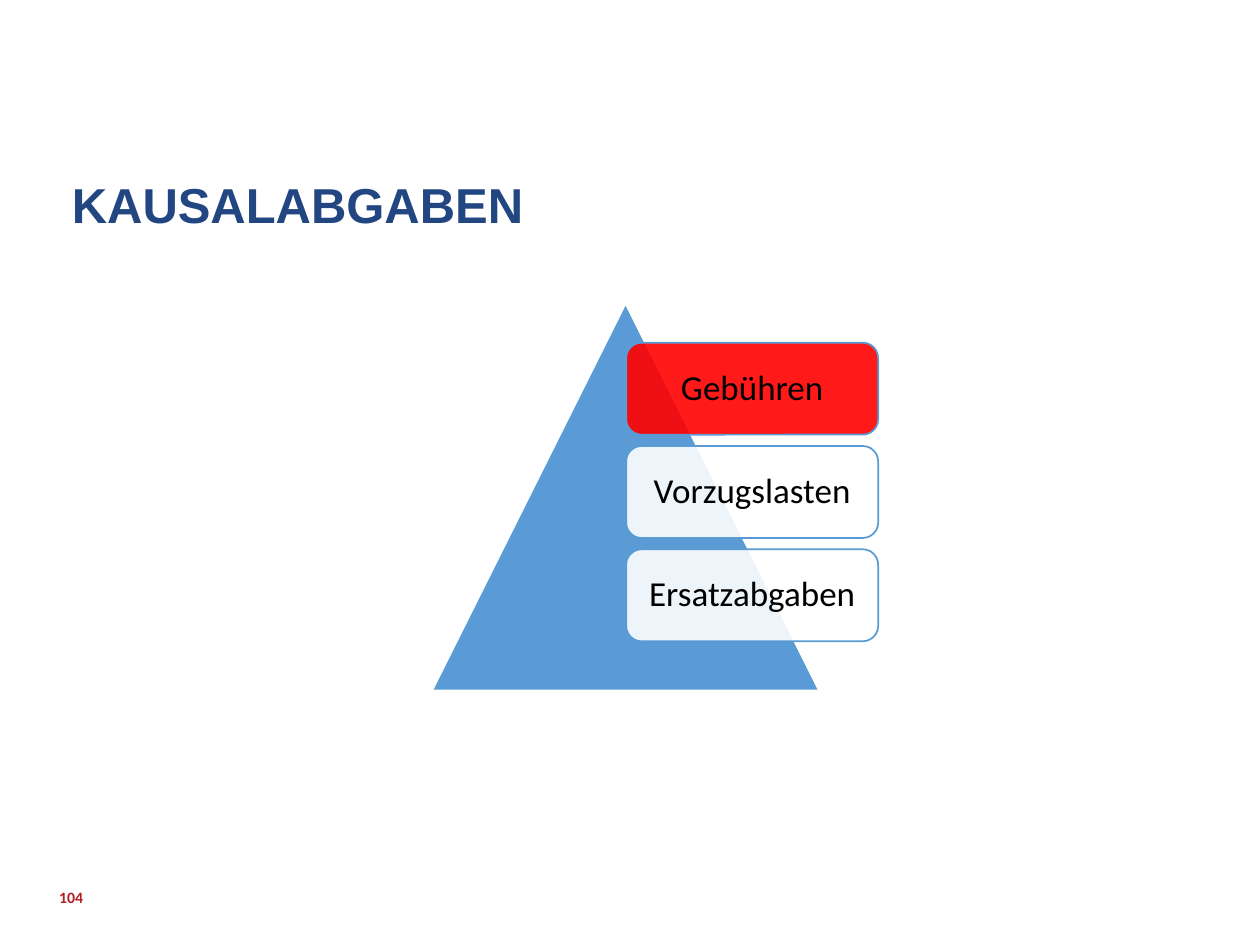
from dataclasses import dataclass

import pptx
import pptx.dml.color
import pptx.enum.shapes
import pptx.enum.text
import pptx.oxml
import pptx.oxml.ns
import pptx.util

Inches = pptx.util.Inches
Kind = pptx.enum.shapes.MSO_SHAPE
Align = pptx.enum.text.PP_ALIGN
Anchor = pptx.enum.text.MSO_ANCHOR


@dataclass(frozen=True)
class Theme:
    navy: str = "224681"
    blue: str = "5B9BD5"
    red: str = "FF0000"
    white: str = "FFFFFF"
    black: str = "000000"
    wine: str = "B21D24"
    head: int = 28
    body: int = 20
    foot: int = 9


@dataclass(frozen=True)
class Card:
    text: str
    fill: str


THEME = Theme()
CARDS = [
    Card("Gebühren", THEME.red),
    Card("Vorzugslasten", THEME.white),
    Card("Ersatzabgaben", THEME.white),
]


def rgb(code: str) -> pptx.dml.color.RGBColor:
    return pptx.dml.color.RGBColor.from_string(code)


def write(shape, text: str, *, size: int, color: str, font: str = "Calibri",
          bold: bool = False, align=Align.LEFT, anchor=Anchor.MIDDLE,
          inset: tuple = (0, 0), space: float = 1.0) -> None:
    frame = shape.text_frame
    frame.word_wrap = True
    frame.auto_size = pptx.enum.text.MSO_AUTO_SIZE.NONE
    frame.vertical_anchor = anchor
    frame.margin_left = frame.margin_right = Inches(inset[0])
    frame.margin_top = frame.margin_bottom = Inches(inset[1])
    para = frame.paragraphs[0]
    para.alignment = align
    para.line_spacing = space
    run = para.add_run()
    run.text = text
    run.font.name = font
    run.font.size = pptx.util.Pt(size)
    run.font.bold = bold
    run.font.color.rgb = rgb(color)


def draw(slide, kind, box: tuple, fill: str, line: str, alpha: int = 100):
    shape = slide.shapes.add_shape(kind, *map(Inches, box))
    shape.shadow.inherit = False
    shape.fill.solid()
    shape.fill.fore_color.rgb = rgb(fill)
    shape.line.color.rgb = rgb(line)
    shape.line.width = pptx.util.Pt(1)
    if alpha < 100:
        tint = shape.fill._xPr.find(".//" + pptx.oxml.ns.qn("a:srgbClr"))
        tint.append(pptx.oxml.parse_xml(
            f'<a:alpha {pptx.oxml.ns.nsdecls("a")} val="{alpha * 1000}"/>'))
    return shape


def stack(slide, cards: list[Card], left: float, top: float, step: float) -> None:
    for row, card in enumerate(cards):
        box = (left, top + row * step, 2, 0.73)
        shape = draw(slide, Kind.ROUNDED_RECTANGLE, box, card.fill, THEME.blue, 90)
        write(shape, card.text, size=THEME.body, color=THEME.black,
              align=Align.CENTER, inset=(0.11, 0.11), space=0.9)


def main() -> None:
    deck = pptx.Presentation()
    deck.slide_width, deck.slide_height = Inches(10), Inches(7.5)
    slide = deck.slides.add_slide(deck.slide_layouts[5])

    title = slide.shapes.title
    title.left, title.top = Inches(0.47), Inches(1.39)
    title.width, title.height = Inches(7.64), Inches(0.94)
    write(title, "KAUSALABGABEN", size=THEME.head, color=THEME.navy, font="Arial",
          bold=True, anchor=Anchor.TOP, inset=(0.1, 0.05), space=0.9)

    draw(slide, Kind.ISOSCELES_TRIANGLE, (3.43, 2.41, 3.07, 3.07),
         THEME.blue, THEME.white)
    stack(slide, CARDS, 4.97, 2.72, 0.82)

    page = slide.shapes.add_textbox(*map(Inches, (0.47, 6.92, 2.25, 0.4)))
    write(page, "104", size=THEME.foot, color=THEME.wine, bold=True)

    deck.save("out.pptx")


if __name__ == "__main__":
    main()
